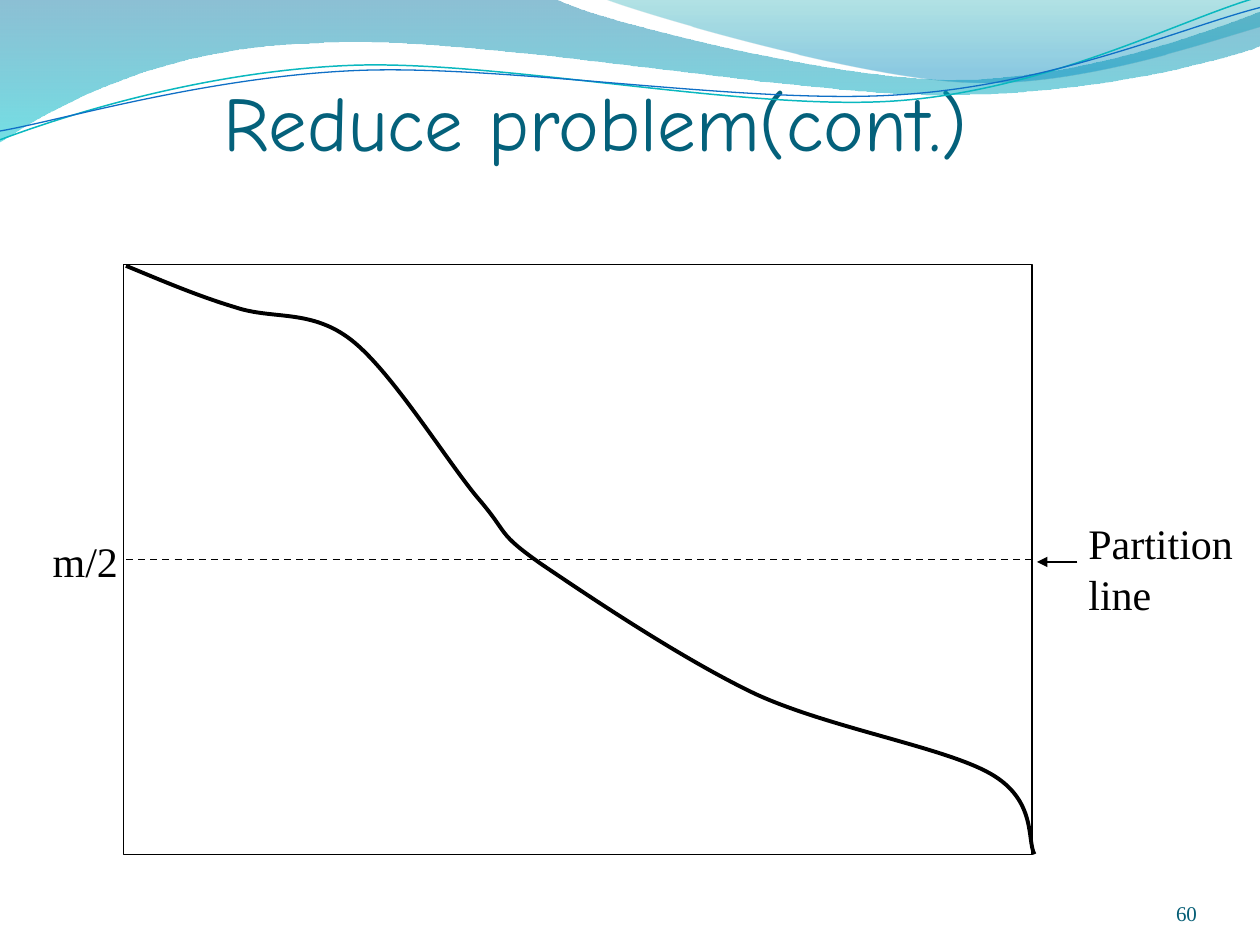
from pptx import Presentation
from pptx.dml.color import RGBColor
from pptx.enum.dml import MSO_LINE
from pptx.enum.shapes import MSO_CONNECTOR, MSO_SHAPE
from pptx.enum.text import MSO_ANCHOR, PP_ALIGN
from pptx.oxml.ns import qn
from pptx.util import Inches, Pt

BLACK = RGBColor(0x00, 0x00, 0x00)
TITLE_TEAL = RGBColor(0x04, 0x61, 0x7B)
NUMBER_TEAL = RGBColor(0x04, 0x5D, 0x75)
LINE_TEAL = RGBColor(0x0A, 0xB8, 0xBF)
LINE_BLUE = RGBColor(0x0F, 0x6F, 0xC6)
WAVE_BLUE = RGBColor(0x00, 0x74, 0xA1)
WAVE_CYAN = RGBColor(0x00, 0xC6, 0xCF)
CREST_TEAL = RGBColor(0x00, 0xA1, 0xA9)
CREST_BLUE = RGBColor(0x00, 0x8B, 0xBF)

LEFT, CENTER, RIGHT = PP_ALIGN.LEFT, PP_ALIGN.CENTER, PP_ALIGN.RIGHT
TOP, MIDDLE, BOTTOM = MSO_ANCHOR.TOP, MSO_ANCHOR.MIDDLE, MSO_ANCHOR.BOTTOM
DASH = MSO_LINE.DASH
TITLE_ONLY = 5

# Each path is a start point, then segments: 2 numbers for a line, 6 for a Bezier curve.
WAVE = [(0, 0), (4.4, -0.01), (4.76, 0.17, 6.64, 0.63, 7.58, 0.63),
        (8.53, 0.63, 9.58, 0.26, 10, 0.09), (10.01, 0.36),
        (9.83, 0.44, 8.7, 0.76, 7.46, 0.75), (6.22, 0.75, 3.82, 0.28, 2.57, 0.34),
        (1.29, 0.36, 0.46, 0.83, -0.01, 1.13), (0, 0)]
CREST = [(4.79, -0.01), (5.09, 0.11, 6.82, 0.62, 7.69, 0.65),
         (8.56, 0.69, 9.61, 0.32, 10, 0.21), (10, 0), (4.79, -0.01)]
TEAL_RIPPLE = [(0, 1.11), (0.48, 0.93, 1.58, 0.57, 2.77, 0.52),
               (3.95, 0.47, 5.93, 0.89, 7.13, 0.8), (8.33, 0.71, 9.38, 0.15, 9.98, -0.02)]
BLUE_RIPPLE = [(0, 1.04), (0.47, 0.96, 1.64, 0.61, 2.83, 0.56),
               (4.03, 0.51, 5.97, 0.84, 7.17, 0.75), (8.36, 0.67, 9.41, 0.21, 10, 0.06)]
BOUNDARY = [(1, 2.11), (1.29, 2.23, 1.57, 2.35, 1.87, 2.44),
            (2.17, 2.54, 2.47, 2.45, 2.79, 2.7), (3.11, 2.95, 3.54, 3.65, 3.79, 3.95),
            (4.05, 4.25, 3.93, 4.22, 4.3, 4.48), (4.67, 4.73, 5.41, 5.23, 6, 5.51),
            (6.59, 5.78, 7.49, 5.93, 7.86, 6.14), (8.23, 6.35, 8.15, 6.67, 8.21, 6.78)]


class SlideBuilder:
    def __init__(self, s, font="Times New Roman"):
        self.s, self.font = s, font

    def set_text(self, sp, box, text, size, color=BLACK, font=None,
                 align=LEFT, anchor=TOP, inset=(0.1, 0.05)):
        """Place a text shape and fill it with one formatted run."""
        sp.left, sp.top, sp.width, sp.height = map(Inches, box)
        tf = sp.text_frame
        dx, dy = map(Inches, inset)
        layout = {"word_wrap": True, "vertical_anchor": anchor, "margin_left": dx,
                  "margin_right": dx, "margin_top": dy, "margin_bottom": dy}
        for name, value in layout.items():
            setattr(tf, name, value)
        p = tf.paragraphs[0]
        p.alignment = align
        r = p.add_run()
        r.text = text
        for name, value in {"name": font or self.font, "size": Pt(size)}.items():
            setattr(r.font, name, value)
        r.font.color.rgb = color

    def title(self, box, text, **style):
        self.set_text(self.s.shapes.title, box, text, **style)

    def label(self, box, text, **style):
        sp = self.s.shapes.add_textbox(*map(Inches, box))
        self.set_text(sp, box, text, **style)

    def stroke(self, line, color, width, dash=None):
        line.color.rgb = color
        line.width = Pt(width)
        if dash:
            line.dash_style = dash

    def frame(self, box, color, width):
        sp = self.s.shapes.add_shape(MSO_SHAPE.RECTANGLE, *map(Inches, box))
        sp.shadow.inherit = False
        sp.fill.background()
        self.stroke(sp.line, color, width)

    def line(self, start, end, width, dash=None, arrow=False):
        c = self.s.shapes.add_connector(MSO_CONNECTOR.STRAIGHT, *map(Inches, start + end))
        self.stroke(c.line, BLACK, width, dash)
        spPr = c._element.spPr
        if arrow:
            ln = spPr.find(qn("a:ln"))
            ln.append(ln.makeelement(qn("a:tailEnd"), {"type": "triangle"}))
        spPr.append(spPr.makeelement(qn("a:effectLst"), {}))

    def outline(self, path, closed=False):
        """Build a freeform, merging each curve's three points into a cubic segment."""
        start, *segments = path
        points = [tuple(map(Inches, seg[i:i + 2]))
                  for seg in segments for i in range(0, len(seg), 2)]
        fb = self.s.shapes.build_freeform(*map(Inches, start), scale=1.0)
        fb.add_line_segments(points, close=closed)
        sp = fb.convert_to_shape()
        sp.shadow.inherit = False
        steps = iter(list(sp._element.iter(qn("a:lnTo"))))
        for seg in segments:
            first = next(steps)
            if len(seg) == 6:
                curve = first.makeelement(qn("a:cubicBezTo"), {})
                first.addprevious(curve)
                for step in (first, next(steps), next(steps)):
                    curve.append(step[0])
                    step.getparent().remove(step)
        return sp

    def curve(self, path, color, width):
        sp = self.outline(path)
        sp.fill.background()
        self.stroke(sp.line, color, width)

    def gradient_area(self, path, stops):
        """Fill a closed path downwards; stops are (position, colour, opacity)."""
        sp = self.outline(path, closed=True)
        sp.line.fill.background()
        sp.fill.gradient()
        sp.fill.gradient_angle = 270
        for stop, (position, color, _) in zip(sp.fill.gradient_stops, stops):
            stop.position = position
            stop.color.rgb = color
        for clr, (_, _, opacity) in zip(sp._element.spPr.iter(qn("a:srgbClr")), stops):
            alpha = clr.makeelement(qn("a:alpha"), {"val": str(round(opacity * 100000))})
            clr.append(alpha)


def main():
    prs = Presentation()
    prs.slide_width, prs.slide_height = Inches(10), Inches(7.5)
    b = SlideBuilder(prs.slides.add_slide(prs.slide_layouts[TITLE_ONLY]))

    b.gradient_area(WAVE, [(0, WAVE_BLUE, 0.45), (1, WAVE_CYAN, 0.55)])
    b.gradient_area(CREST, [(0, CREST_TEAL, 0.3), (0.8, CREST_BLUE, 0.45)])
    b.curve(TEAL_RIPPLE, LINE_TEAL, 0.85)
    b.curve(BLUE_RIPPLE, LINE_BLUE, 0.75)

    b.title((1.35, 0.54, 6.76, 0.84), "Reduce problem(cont.)", size=44, color=TITLE_TEAL,
            font="Comic Neue", align=CENTER, anchor=MIDDLE)
    b.label((8.67, 6.95, 0.83, 0.4), "60", size=12, color=NUMBER_TEAL,
            align=RIGHT, anchor=BOTTOM, inset=(0, 0))

    b.frame((0.98, 2.1, 7.21, 4.68), BLACK, 0.75)
    b.line((1, 4.44), (8.18, 4.44), 1, dash=DASH)
    b.curve(BOUNDARY, BLACK, 2.25)
    b.label((0.32, 4.2, 1.06, 0.5), "m/2", size=24)
    b.label((8.54, 4.06, 1.46, 0.9), "Partition line", size=24)
    b.line((8.55, 4.46), (8.23, 4.46), 0.75, arrow=True)

    prs.save("out.pptx")


if __name__ == "__main__":
    main()
